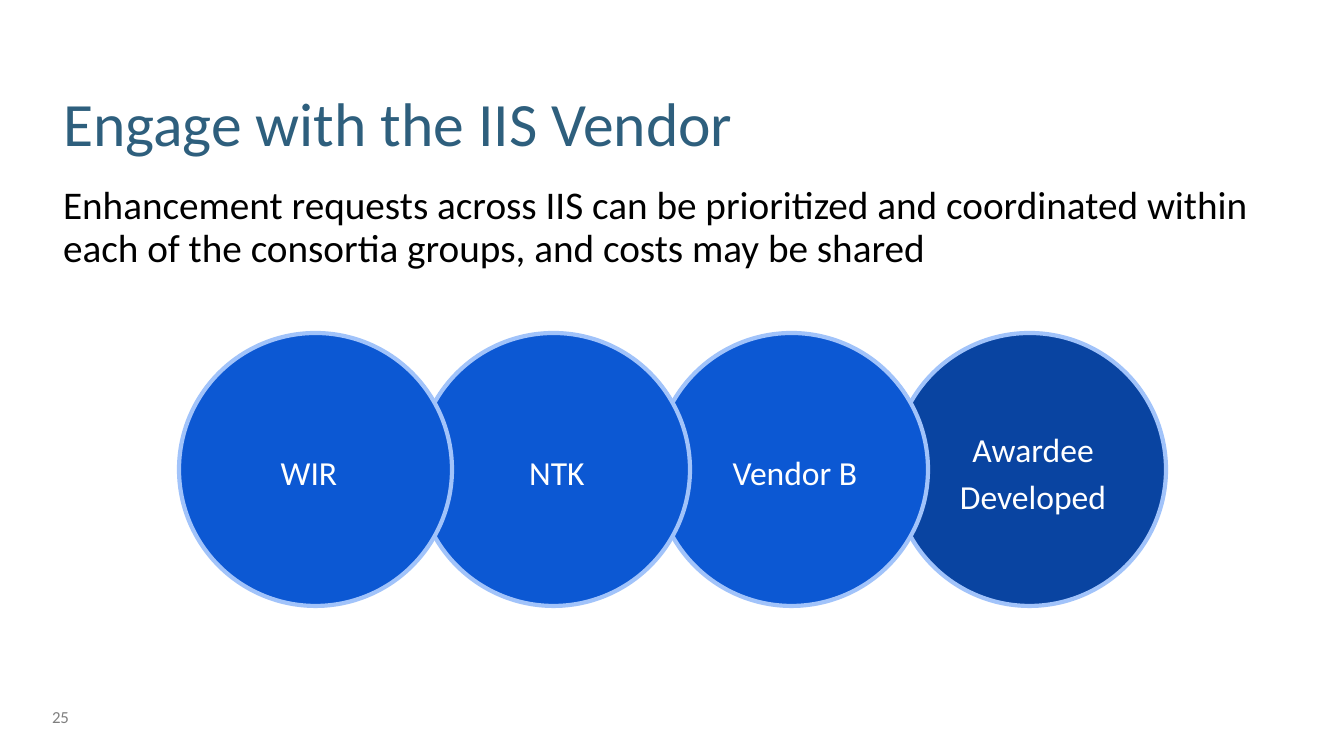
from dataclasses import dataclass

from pptx import Presentation
from pptx import util as u
from pptx.dml.color import RGBColor
from pptx.enum import shapes, text

PX = u.Inches(10) / 1344
FONT = "Calibri"
COLORS = {
    "title": "2E5F7D",
    "body": "000000",
    "page": "7F7F7F",
    "label": "FFFFFF",
    "vendor": "0C58D3",
    "awardee": "0944A1",
    "ring": "A1C3FA",
}
CIRCLE_LEFT, CIRCLE_TOP, CIRCLE_SIZE, CIRCLE_PITCH = 179, 333, 273, 238
LABEL_TOP, LABEL_WIDTH, LABEL_HEIGHT = 431, 190, 77


@dataclass(frozen=True)
class Box:
    left: int
    top: int
    width: int
    height: int

    def emu(self) -> list[int]:
        return [px(n) for n in (self.left, self.top, self.width, self.height)]


@dataclass(frozen=True)
class Style:
    size: int
    color: str
    inset_x: int
    inset_y: int
    spacing: float = 1.0
    align: text.PP_ALIGN = text.PP_ALIGN.LEFT
    anchor: text.MSO_ANCHOR = text.MSO_ANCHOR.TOP


@dataclass(frozen=True)
class Group:
    name: str
    fill: str = "vendor"
    label_offset: int = 45


TITLE = Style(33, "title", 9, 5, anchor=text.MSO_ANCHOR.MIDDLE)
BODY = Style(21, "body", 9, 5, spacing=0.9)
PAGE = Style(9, "page", 0, 5)
LABEL = Style(18, "label", 13, 13, 1.15, text.PP_ALIGN.CENTER, text.MSO_ANCHOR.MIDDLE)

GROUPS = [
    Group("WIR", label_offset=35),
    Group("NTK"),
    Group("Vendor B"),
    Group("Awardee Developed", fill="awardee"),
]


def px(n: int) -> int:
    return round(n * PX)


def rgb(name: str) -> RGBColor:
    return RGBColor.from_string(COLORS[name])


def add_text(slide, box: Box, words: str, style: Style) -> None:
    frame = slide.shapes.add_textbox(*box.emu()).text_frame
    frame.word_wrap = True
    frame.vertical_anchor = style.anchor
    frame.margin_left = frame.margin_right = px(style.inset_x)
    frame.margin_top = frame.margin_bottom = px(style.inset_y)
    paragraph = frame.paragraphs[0]
    paragraph.text = words
    paragraph.alignment = style.align
    paragraph.line_spacing = style.spacing
    paragraph.font.name = FONT
    paragraph.font.size = u.Pt(style.size)
    paragraph.font.color.rgb = rgb(style.color)


def add_group(slide, group: Group, left: int) -> None:
    box = Box(left, CIRCLE_TOP, CIRCLE_SIZE, CIRCLE_SIZE)
    circle = slide.shapes.add_shape(shapes.MSO_SHAPE.OVAL, *box.emu())
    circle.shadow.inherit = False
    circle.fill.solid()
    circle.fill.fore_color.rgb = rgb(group.fill)
    circle.line.color.rgb = rgb("ring")
    circle.line.width = u.Pt(2.25)
    label = Box(left + group.label_offset, LABEL_TOP, LABEL_WIDTH, LABEL_HEIGHT)
    add_text(slide, label, group.name, LABEL)


def main() -> None:
    deck = Presentation()
    deck.slide_width, deck.slide_height = px(1344), px(756)
    slide = deck.slides.add_slide(deck.slide_layouts[6])

    add_text(slide, Box(52, 702, 59, 31), "25", PAGE)
    add_text(slide, Box(54, 63, 1245, 118), "Engage with the IIS Vendor", TITLE)
    add_text(
        slide,
        Box(54, 181, 1245, 130),
        "Enhancement requests across IIS can be prioritized and coordinated "
        "within each of the consortia groups, and costs may be shared",
        BODY,
    )
    # Each circle overlaps the one to its right, so draw from right to left.
    for index, group in reversed(list(enumerate(GROUPS))):
        add_group(slide, group, CIRCLE_LEFT + index * CIRCLE_PITCH)

    deck.save("out.pptx")


if __name__ == "__main__":
    main()
